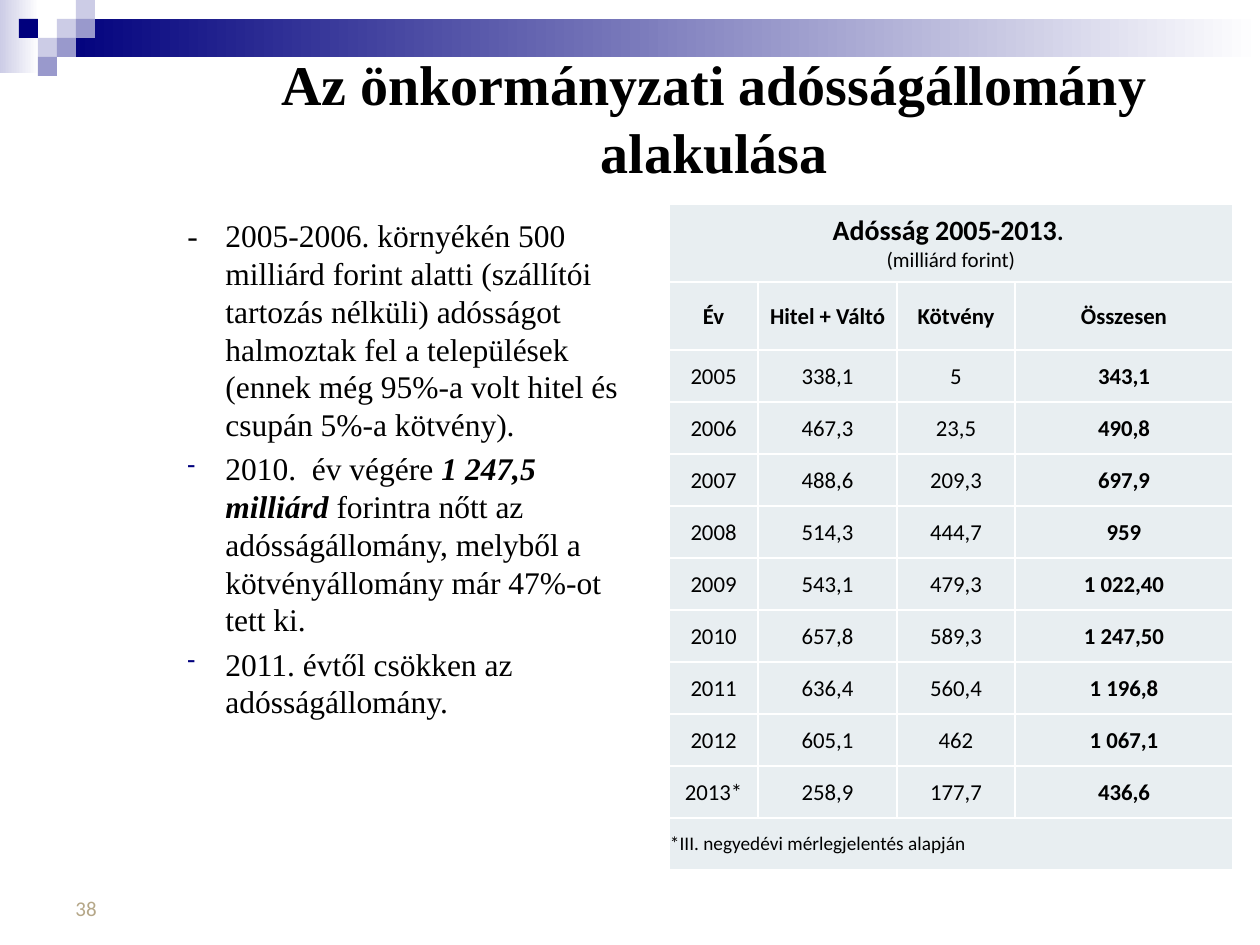
from lxml.etree import SubElement
from pptx import Presentation
from pptx.dml.color import RGBColor
from pptx.enum.shapes import MSO_SHAPE
from pptx.enum.text import MSO_ANCHOR, PP_ALIGN
from pptx.oxml.ns import qn
from pptx.util import Emu, Pt

SERIF, SANS = "Times New Roman", "Calibri"
NAVY, LILAC, PALE, WHITE, BLACK = "00007D", "9999CC", "CCCCE6", "FFFFFF", "000000"
CELL_FILL, NUMBER_COLOR = "E8EEF1", "B5A788"

# Content
TITLE = "Az önkormányzati adósságállomány alakulása"
PAGE_NUMBER = "38"
# Body paragraphs: (has bullet, [(text, emphasised)])
BODY = [
    (False, [("-\t2005-2006. környékén 500 milliárd forint alatti (szállítói tartozás "
              "nélküli) adósságot halmoztak fel a települések (ennek még 95%-a volt "
              "hitel és csupán 5%-a kötvény).", False)]),
    (True, [("2010.  év végére ", False), ("1 247,5 milliárd ", True),
            ("forintra nőtt az adósságállomány, melyből a kötvényállomány már "
             "47%-ot tett ki.", False)]),
    (True, [("2011. évtől csökken az adósságállomány.", False)]),
]
HEADING = [("Adósság 2005-2013", 16, True), (". ", 14, True)]
UNIT = "(milliárd forint)"
COLUMNS = ["Év", "Hitel + Váltó", "Kötvény", "Összesen"]
DEBT = [
    ("2005", "338,1", "5", "343,1"),
    ("2006", "467,3", "23,5", "490,8"),
    ("2007", "488,6", "209,3", "697,9"),
    ("2008", "514,3", "444,7", "959"),
    ("2009", "543,1", "479,3", "1 022,40"),
    ("2010", "657,8", "589,3", "1 247,50"),
    ("2011", "636,4", "560,4", "1 196,8"),
    ("2012", "605,1", "462", "1 067,1"),
    ("2013*", "258,9", "177,7", "436,6"),
]
FOOTNOTE = "*III. negyedévi mérlegjelentés alapján"

# Layout in px, 126 to the inch
COL_WIDTHS = [89, 139, 118, 218]
ROW_HEIGHTS = [78, 68] + [52] * (len(DEBT) + 1)
SQUARE = 19
SQUARES = [(3, 1, PALE), (4, 0, PALE), (4, 1, LILAC), (2, 2, PALE),
           (1, 1, NAVY), (3, 2, LILAC), (2, 3, LILAC)]  # column, row, colour


def px(n):
    return Emu(round(n * 914400 / 126))


def rgb(color):
    return RGBColor.from_string(color)


def add_run(p, text, size, font, bold=False, italic=False, color=BLACK):
    r = p.add_run()
    r.text = text
    r.font.size, r.font.name = Pt(size), font
    r.font.bold, r.font.italic = bold, italic
    r.font.color.rgb = rgb(color)


def add_rect(s, x, y, w, h, *colors):
    sp = s.shapes.add_shape(MSO_SHAPE.RECTANGLE, px(x), px(y), px(w), px(h))
    sp.shadow.inherit = False
    sp.line.fill.background()
    if len(colors) == 1:
        sp.fill.solid()
        sp.fill.fore_color.rgb = rgb(colors[0])
    else:
        sp.fill.gradient()
        sp.fill.gradient_angle = 0
        for stop, color in zip(sp.fill.gradient_stops, colors):
            stop.color.rgb = rgb(color)


def add_text(s, x, y, w, h, anchor):
    tf = s.shapes.add_textbox(px(x), px(y), px(w), px(h)).text_frame
    tf.word_wrap = True
    tf.vertical_anchor = anchor
    return tf


def hang(p, bullet):
    """Hanging indent with a tab stop, and a dash bullet where wanted."""
    p.space_before = Pt(3.6)
    pPr = p._p.get_or_add_pPr()
    pPr.set("marL", str(px(49)))
    pPr.set("indent", str(-px(38)))
    if bullet:
        SubElement(SubElement(pPr, qn("a:buClr")), qn("a:srgbClr"), val=NAVY)
        SubElement(pPr, qn("a:buSzPct"), val="75000")
        SubElement(pPr, qn("a:buChar"), char="-")
    else:
        SubElement(pPr, qn("a:buNone"))
    tabs = SubElement(pPr, qn("a:tabLst"))
    SubElement(tabs, qn("a:tab"), pos=str(px(49)), algn="l")


def style_cell(cell):
    tcPr = cell._tc.get_or_add_tcPr()
    for side in ("a:lnL", "a:lnR", "a:lnT", "a:lnB"):
        ln = SubElement(tcPr, qn(side), w=str(Pt(1)))
        SubElement(SubElement(ln, qn("a:solidFill")), qn("a:srgbClr"), val=WHITE)
    cell.fill.solid()
    cell.fill.fore_color.rgb = rgb(CELL_FILL)
    cell.vertical_anchor = MSO_ANCHOR.MIDDLE
    cell.margin_left = cell.margin_right = cell.margin_top = px(1)
    cell.margin_bottom = 0


def add_debt_table(s, x, y):
    n_rows, n_cols = len(ROW_HEIGHTS), len(COL_WIDTHS)
    table = s.shapes.add_table(n_rows, n_cols, px(x), px(y), px(sum(COL_WIDTHS)),
                               px(sum(ROW_HEIGHTS))).table
    table.first_row = table.horz_banding = False
    for column, width in zip(table.columns, COL_WIDTHS):
        column.width = px(width)
    for row, height in zip(table.rows, ROW_HEIGHTS):
        row.height = px(height)
    for cell in table.iter_cells():
        style_cell(cell)

    # Heading and footnote span the whole width
    for i in (0, n_rows - 1):
        table.cell(i, 0).merge(table.cell(i, n_cols - 1))
    p = table.cell(0, 0).text_frame.paragraphs[0]
    p.alignment = PP_ALIGN.CENTER
    for text, size, bold in HEADING:
        add_run(p, text, size, SANS, bold)
    p.add_line_break()
    add_run(p, UNIT, 12, SANS)
    add_run(table.cell(n_rows - 1, 0).text_frame.paragraphs[0], FOOTNOTE, 11, SANS)

    # Column names and values; names and totals are bold
    for i, values in enumerate([COLUMNS] + DEBT, start=1):
        for j, text in enumerate(values):
            p = table.cell(i, j).text_frame.paragraphs[0]
            p.alignment = PP_ALIGN.CENTER
            add_run(p, text, 13, SANS, bold=i == 1 or j == n_cols - 1)


def main():
    prs = Presentation()
    prs.slide_width, prs.slide_height = px(1260), px(945)
    s = prs.slides.add_slide(prs.slide_layouts[6])

    # Banner
    add_rect(s, 0, 0, 39, 73, PALE, WHITE)
    add_rect(s, 57, 19, 1203, 38, NAVY, WHITE)
    for col, row, color in SQUARES:
        add_rect(s, col * SQUARE, row * SQUARE, SQUARE, SQUARE, color)

    # Title
    p = add_text(s, 198, 38, 1033, 158, MSO_ANCHOR.MIDDLE).paragraphs[0]
    p.alignment = PP_ALIGN.CENTER
    add_run(p, TITLE, 32, SERIF, bold=True)

    # Body
    tf = add_text(s, 164, 210, 486, 643, MSO_ANCHOR.TOP)
    for i, (bullet, runs) in enumerate(BODY):
        p = tf.add_paragraph() if i else tf.paragraphs[0]
        hang(p, bullet)
        for text, strong in runs:
            add_run(p, text, 18, SERIF, bold=strong, italic=strong)

    # Page number
    p = add_text(s, 63, 861, 294, 66, MSO_ANCHOR.BOTTOM).paragraphs[0]
    add_run(p, PAGE_NUMBER, 12, SANS, color=NUMBER_COLOR)

    add_debt_table(s, 669, 204)
    prs.save("out.pptx")


if __name__ == "__main__":
    main()
